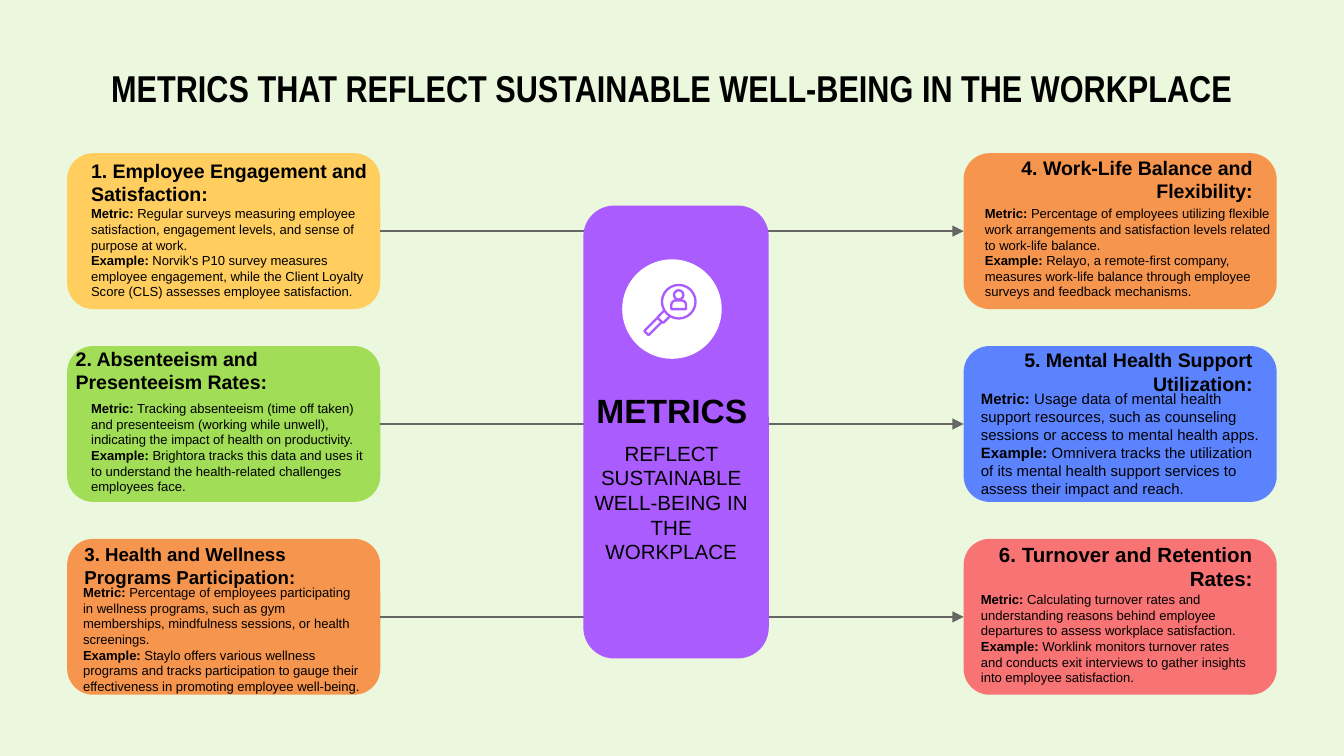
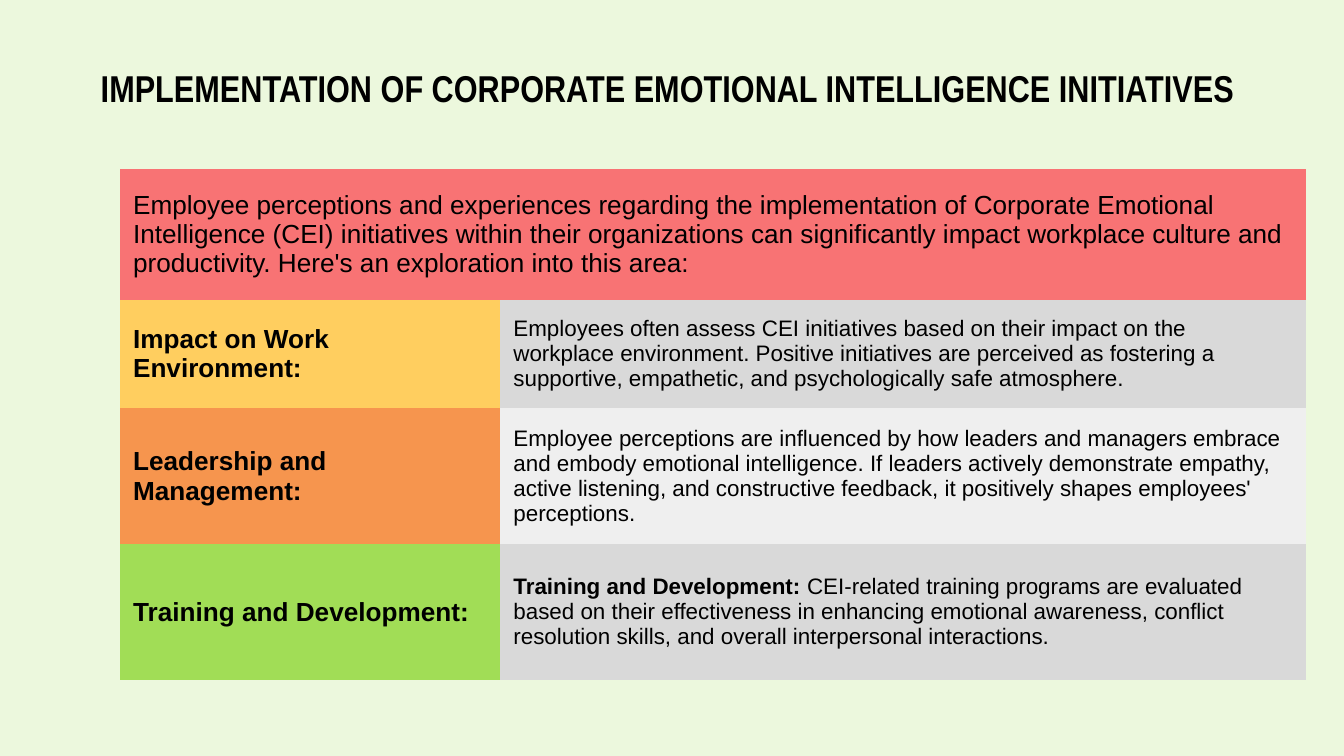
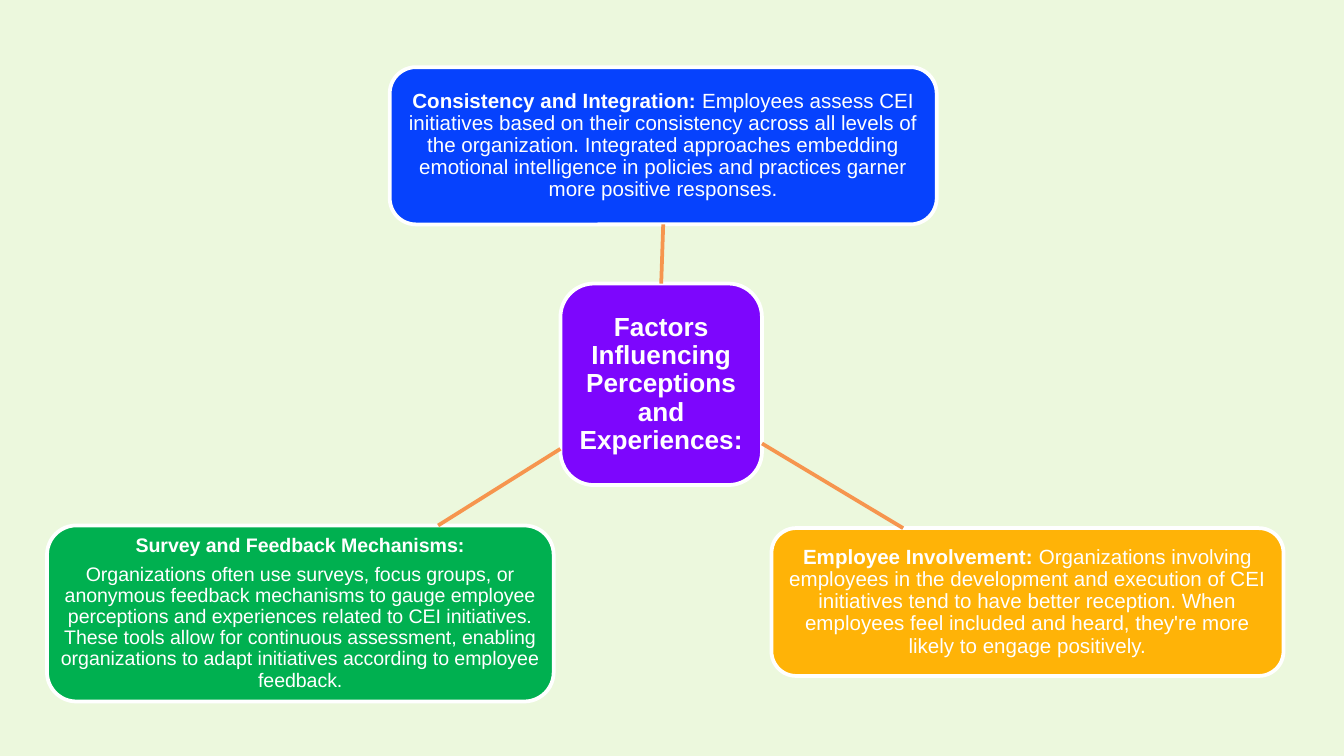
from lxml.etree import SubElement
from pptx import Presentation
from pptx.dml.color import RGBColor
from pptx.enum.shapes import MSO_CONNECTOR, MSO_SHAPE
from pptx.enum.text import MSO_ANCHOR, MSO_AUTO_SIZE, PP_ALIGN
from pptx.oxml.ns import qn
from pptx.util import Inches, Pt

COLORS = {
    "background": "ECF8DD", "black": "000000", "white": "FFFFFF", "gray": "666666",
    "purple": "AA5CFE", "orange": "F6954E", "yellow": "FFCE5F", "blue": "5C83FE",
    "green": "A1DD56", "red": "F87374", "silver": "D9D9D9", "mist": "EFEFEF",
    "violet": "7D06FD", "royal": "0642FD", "amber": "FFB307", "emerald": "00B050",
}
RGB = {name: RGBColor.from_string(value) for name, value in COLORS.items()}
LEFT, CENTER, RIGHT = PP_ALIGN.LEFT, PP_ALIGN.CENTER, PP_ALIGN.RIGHT
NO_GRID_STYLE = "{2D5ABB26-0587-4C30-8999-92F81FD0307C}"

presentation = Presentation()
presentation.slide_width = Inches(10)
presentation.slide_height = Inches(5.625)
unit = presentation.slide_width / 100

background = presentation.slide_master.background.fill
background.solid()
background.fore_color.rgb = RGB["background"]


def write(frame, paragraphs, size, color="black", font="Arial", align=LEFT,
          anchor=MSO_ANCHOR.TOP, inset=0.1, spacing=None, after=0):
    frame.word_wrap = True
    frame.auto_size = MSO_AUTO_SIZE.NONE
    frame.vertical_anchor = anchor
    frame.margin_left = frame.margin_right = Inches(inset)
    frame.margin_top = frame.margin_bottom = Inches(inset)
    for index, (bold_text, plain_text) in enumerate(paragraphs):
        paragraph = frame.add_paragraph() if index else frame.paragraphs[0]
        paragraph.alignment = align
        paragraph.line_spacing = spacing
        paragraph.space_after = Pt(after)
        for text, bold in ((bold_text, True), (plain_text, False)):
            if text:
                run = paragraph.add_run()
                run.text = text
                run.font.name = font
                run.font.size = Pt(size)
                run.font.bold = bold
                run.font.color.rgb = RGB[color]


def draw(slide, kind, bounds, fill, line=None, width=2, rotation=0):
    shape = slide.shapes.add_shape(kind, *[round(unit * cells) for cells in bounds])
    shape.shadow.inherit = False
    shape.rotation = rotation
    shape.fill.solid()
    shape.fill.fore_color.rgb = RGB[fill]
    if line:
        shape.line.color.rgb = RGB[line]
        shape.line.width = Pt(width)
    else:
        shape.line.fill.background()
    return shape


titles = [
    "METRICS THAT REFLECT SUSTAINABLE WELL-BEING IN THE WORKPLACE",
    "IMPLEMENTATION OF CORPORATE EMOTIONAL INTELLIGENCE INITIATIVES ",
]
title_slides = []
for text in titles:
    slide = presentation.slides.add_slide(presentation.slide_layouts[5])
    title = slide.shapes.title
    title.left, title.top, title.width, title.height = [round(unit * cells) for cells in (5, 4.5, 90, 4.1)]
    write(title.text_frame, [(text, "")], 20, font="Arial Narrow", align=CENTER, anchor=MSO_ANCHOR.MIDDLE)
    title_slides.append(slide)
metrics_slide, initiatives_slide = title_slides
links = []

metrics = [
    ("yellow", "1. Employee Engagement and Satisfaction:", 10.5, (5.8, 10.8, 29.6, 4.1),
     " Regular surveys measuring employee satisfaction, engagement levels, and sense of purpose at work.",
     " Norvik's P10 survey measures employee engagement, while the Client Loyalty Score (CLS) assesses employee satisfaction.",
     7, (5.8, 14.3, 23, 5.9)),
    ("green", "2. Absenteeism and Presenteeism Rates:", 10.5, (4.65, 24.8, 25.2, 4),
     " Tracking absenteeism (time off taken) and presenteeism (working while unwell), indicating the impact of health on productivity.",
     " Brightora tracks this data and uses it to understand the health-related challenges employees face.",
     7, (5.8, 28.8, 23.1, 5.8)),
    ("orange", "3. Health and Wellness Programs Participation:", 10, (5.3, 39.4, 22.1, 2),
     " Percentage of employees participating in wellness programs, such as gym memberships, mindfulness sessions, or health screenings.",
     " Staylo offers various wellness programs and tracks participation to gauge their effectiveness in promoting employee well-being.",
     7, (5.2, 42.5, 22.7, 6.6)),
    ("orange", "4. Work-Life Balance and Flexibility:", 10.5, (67.7, 10.6, 26.5, 4.2),
     " Percentage of employees utilizing flexible work arrangements and satisfaction levels related to work-life balance.",
     " Relayo, a remote-first company, measures work-life balance through employee surveys and feedback mechanisms.",
     7, (72.3, 14.3, 23.7, 6.1)),
    ("blue", "5. Mental Health Support Utilization:", 10.5, (69.2, 24.9, 25, 4.2),
     " Usage data of mental health support resources, such as counseling sessions or access to mental health apps.",
     " Omnivera tracks the utilization of its mental health support services to assess their impact and reach.",
     8, (72, 28, 23.1, 6.1)),
    ("red", "6. Turnover and Retention Rates:", 11, (70.6, 39.3, 23.6, 4.1),
     " Calculating turnover rates and understanding reasons behind employee departures to assess workplace satisfaction.",
     " Worklink monitors turnover rates and conducts exit interviews to gather insights into employee satisfaction.",
     7, (72, 43, 22.2, 6)),
]
boxes = []
labels = []
for index, (color, heading, heading_size, heading_at, metric, example, body_size, body_at) in enumerate(metrics):
    column, row = divmod(index, 3)
    bounds = (5 + 66.7 * column, 11.4 + 14.35 * row, 23.3, 11.6)
    boxes.append(draw(metrics_slide, MSO_SHAPE.ROUNDED_RECTANGLE, bounds, color))
    labels.append((heading_at, [(heading, "")], heading_size, RIGHT if column else LEFT))
    labels.append((body_at, [("Metric:", metric), ("Example:", example)], body_size, LEFT))

for left_box, right_box in zip(boxes[:3], boxes[3:]):
    link = metrics_slide.shapes.add_connector(MSO_CONNECTOR.STRAIGHT, 0, 0, 0, 0)
    link.begin_connect(left_box, 3)
    link.end_connect(right_box, 1)
    links.append((link, "gray", 0.75, True))

draw(metrics_slide, MSO_SHAPE.ROUNDED_RECTANGLE, (43.4, 15.3, 13.8, 33.7), "purple")
draw(metrics_slide, MSO_SHAPE.OVAL, (46.3, 19.3, 7.4, 7.4), "white")
magnifier = [
    (MSO_SHAPE.ROUNDED_RECTANGLE, (47.85, 24, 1.6, 0.45), 135),
    (MSO_SHAPE.ROUNDED_RECTANGLE, (49, 23.25, 0.8, 0.6), 135),
    (MSO_SHAPE.OVAL, (49.25, 21.2, 2.5, 2.5), 0),
    (MSO_SHAPE.ROUND_2_SAME_RECTANGLE, (49.95, 22.35, 1.1, 0.65), 0),
    (MSO_SHAPE.OVAL, (50.15, 21.6, 0.7, 0.7), 0),
]
for kind, bounds, rotation in magnifier:
    part = draw(metrics_slide, kind, bounds, "white", "purple", 1.25, rotation)
    if kind == MSO_SHAPE.ROUND_2_SAME_RECTANGLE:
        part.adjustments[0] = 0.5

labels.append(((40, 28, 20, 3.6), [("METRICS", "")], 18, CENTER))
labels.append(((43.1, 31.8, 13.7, 5.2), [("", "REFLECT SUSTAINABLE WELL-BEING IN THE WORKPLACE")], 11, CENTER))
for bounds, paragraphs, size, align in labels:
    textbox = metrics_slide.shapes.add_textbox(*[round(unit * cells) for cells in bounds])
    write(textbox.text_frame, paragraphs, size, align=align)

initiatives = [
    (9.7, [("red", 14, "", "Employee perceptions and experiences regarding the implementation of Corporate Emotional Intelligence (CEI) initiatives within their organizations can significantly impact workplace culture and productivity. Here's an exploration into this area:")]),
    (8.1, [("yellow", 14, "Impact on Work Environment:", ""),
           ("silver", 12, "", "Employees often assess CEI initiatives based on their impact on the workplace environment. Positive initiatives are perceived as fostering a supportive, empathetic, and psychologically safe atmosphere.")]),
    (10.1, [("orange", 14, "Leadership and Management:", ""),
            ("mist", 12, "", "Employee perceptions are influenced by how leaders and managers embrace and embody emotional intelligence. If leaders actively demonstrate empathy, active listening, and constructive feedback, it positively shapes employees' perceptions.")]),
    (10.1, [("green", 14, "Training and Development:", ""),
            ("silver", 12, "Training and Development:", " CEI-related training programs are evaluated based on their effectiveness in enhancing emotional awareness, conflict resolution skills, and overall interpersonal interactions.")]),
]
table_bounds = [round(unit * cells) for cells in (8.9, 12.6, 88.3, 38)]
table = initiatives_slide.shapes.add_table(len(initiatives), 2, *table_bounds).table
table.first_row = table.horz_banding = False
table._tbl.tblPr.find(qn("a:tableStyleId")).text = NO_GRID_STYLE
for column, width in zip(table.columns, (28.3, 60)):
    column.width = round(unit * width)
table.cell(0, 0).merge(table.cell(0, 1))
for row, (height, entries) in enumerate(initiatives):
    table.rows[row].height = round(unit * height)
    for column, (color, size, bold_text, plain_text) in enumerate(entries):
        cell = table.cell(row, column)
        cell.fill.solid()
        cell.fill.fore_color.rgb = RGB[color]
        cell.vertical_anchor = MSO_ANCHOR.MIDDLE
        cell.margin_left = cell.margin_right = cell.margin_top = cell.margin_bottom = Inches(0.1)
        write(cell.text_frame, [(bold_text, plain_text)], size, anchor=MSO_ANCHOR.MIDDLE)

factors_slide = presentation.slides.add_slide(presentation.slide_layouts[6])
factors = [
    ("violet", (41.7, 21.1, 15, 15), 14, 0.04, [("Factors Influencing Perceptions and Experiences:", "")]),
    ("royal", (29, 5, 40.7, 11.7), 11, 0.03,
     [("Consistency and Integration:", " Employees assess CEI initiatives based on their consistency across all levels of the organization. Integrated approaches embedding emotional intelligence in policies and practices garner more positive responses.")]),
    ("amber", (57.4, 39.3, 38.1, 11), 11, 0.03,
     [("Employee Involvement:", " Organizations involving employees in the development and execution of CEI initiatives tend to have better reception. When employees feel included and heard, they're more likely to engage positively.")]),
    ("emerald", (3.5, 39.1, 37.7, 13.1), 10.5, 0.03,
     [("Survey and Feedback Mechanisms:", ""),
      ("", "Organizations often use surveys, focus groups, or anonymous feedback mechanisms to gauge employee perceptions and experiences related to CEI initiatives. These tools allow for continuous assessment, enabling organizations to adapt initiatives according to employee feedback.")]),
]
cards = []
for color, bounds, size, inset, paragraphs in factors:
    card = draw(factors_slide, MSO_SHAPE.ROUNDED_RECTANGLE, bounds, color, "white")
    write(card.text_frame, paragraphs, size, color="white", align=CENTER,
          anchor=MSO_ANCHOR.MIDDLE, inset=inset, spacing=0.9, after=4)
    cards.append(card)

spokes = [(49.2, 21.1, 49.3, 16.7), (56.7, 33, 67.2, 39.3), (41.7, 33.4, 32.6, 39.1)]
for ends in spokes:
    link = factors_slide.shapes.add_connector(MSO_CONNECTOR.STRAIGHT, *[round(unit * cells) for cells in ends])
    links.append((link, "orange", 2, False))
links[-3][0].begin_connect(cards[0], 0)
links[-3][0].end_connect(cards[1], 2)

for link, color, width, arrow in links:
    link.line.color.rgb = RGB[color]
    link.line.width = Pt(width)
    properties = link._element.spPr
    if arrow:
        SubElement(properties.find(qn("a:ln")), qn("a:tailEnd"), type="triangle")
    SubElement(properties, qn("a:effectLst"))

presentation.save("out.pptx")
